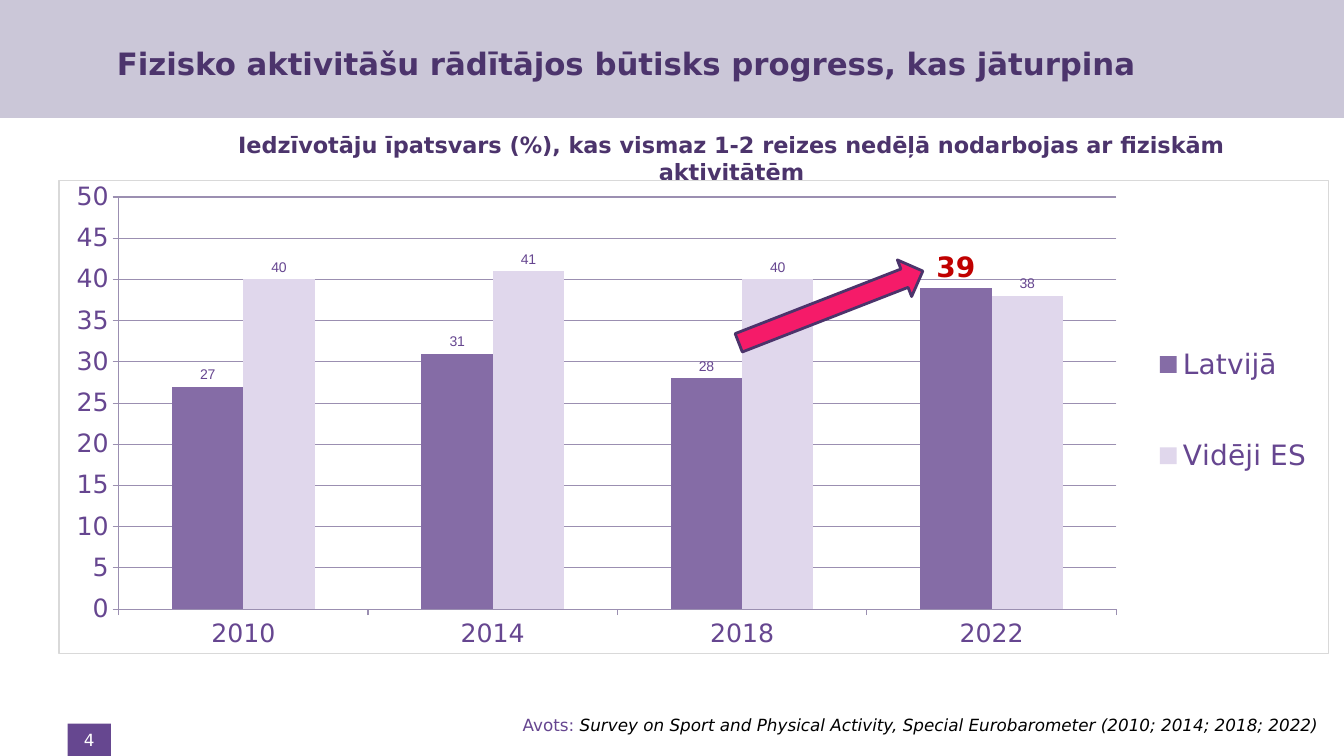
from pptx import Presentation
from pptx import util as u
from pptx.chart import data as chart_data
from pptx.dml.color import RGBColor
from pptx.enum import chart as c, shapes, text
from pptx.oxml import parse_xml
from pptx.oxml.ns import nsdecls

COLORS = {
    "band": "CBC7D8", "page": "664790", "heading": "4C346C", "label": "664690",
    "grid": "9B8FB1", "frame": "D9D9D9", "latvia": "856CA6", "europe": "E0D7EC",
    "highlight": "C00000", "arrow": "F51B69", "outline": "4B346B",
    "white": "FFFFFF", "black": "000000",
}
MAIN_FONT = "DejaVu Sans"
YEARS = ["2010", "2014", "2018", "2022"]
SERIES = [("Latvijā", (27, 31, 28, 39), "latvia"),
          ("Vidēji ES", (40, 41, 40, 38), "europe")]


def rgb(name):
    return RGBColor.from_string(COLORS[name])


def style_font(font, size, color, name=MAIN_FONT, **extra):
    values = {"size": u.Pt(size), "name": name, **extra}
    for key, value in values.items():
        setattr(font, key, value)
    font.color.rgb = rgb(color)


def style_line(line, color, width):
    line.color.rgb = rgb(color)
    line.width = u.Pt(width)


def add_block(slide, box, fill, preset=shapes.MSO_SHAPE.RECTANGLE):
    shape = slide.shapes.add_shape(preset, *map(u.Inches, box))
    shape.shadow.inherit = False
    shape.fill.solid()
    shape.fill.fore_color.rgb = rgb(fill)
    shape.line.fill.background()
    return shape


def add_text(slide, box, runs, align=text.PP_ALIGN.LEFT,
             anchor=text.MSO_ANCHOR.TOP, inset=0.1, spacing=None):
    """Add one paragraph; runs holds (wording, font format) pairs."""
    frame = slide.shapes.add_textbox(*map(u.Inches, box)).text_frame
    values = {"word_wrap": True, "vertical_anchor": anchor,
              "margin_left": u.Inches(inset)}
    for key, value in values.items():
        setattr(frame, key, value)
    paragraph = frame.paragraphs[0]
    paragraph.alignment = align
    paragraph.line_spacing = spacing
    for wording, font_format in runs:
        run = paragraph.add_run()
        run.text = wording
        style_font(run.font, **font_format)
    return frame


def add_header(slide, left, top, width, height):
    add_block(slide, (left, top, width, height), "band")
    add_text(slide, (left + 1.16, top, width - 1.49, height + 0.08),
             [("Fizisko aktivitāšu rādītājos būtisks progress, kas jāturpina",
               {"size": 22, "color": "heading", "bold": True})],
             anchor=text.MSO_ANCHOR.MIDDLE, inset=0)
    add_text(slide, (left + 2.21, top + 1.25, 10.09, 0.63),
             [("Iedzīvotāju īpatsvars (%), kas vismaz 1-2 reizes nedēļā "
               "nodarbojas ar fiziskām aktivitātēm",
               {"size": 16, "color": "heading", "bold": True})],
             align=text.PP_ALIGN.CENTER)


def layout_xml(x, y, w, h, inner=False):
    """Return a manual chart layout given in fractions of the chart."""
    target = '<c:layoutTarget val="inner"/>' if inner else ""
    sizes = "".join(f'<c:{key} val="{value}"/>'
                    for key, value in zip("xywh", (x, y, w, h)))
    return parse_xml(
        f'<c:layout {nsdecls("c")}><c:manualLayout>{target}'
        f'<c:xMode val="edge"/><c:yMode val="edge"/>{sizes}'
        '</c:manualLayout></c:layout>')


def place_part(part, index, layout):
    for old in part.xpath("c:layout"):
        part.remove(old)
    part.insert(index, layout)


def style_axes(chart):
    for axis in (chart.category_axis, chart.value_axis):
        axis.major_tick_mark = c.XL_TICK_MARK.OUTSIDE
        style_font(axis.tick_labels.font, 18, "label")
        style_line(axis.format.line, "grid", 0.75)
    values = chart.value_axis
    limits = {"minimum_scale": 0, "maximum_scale": 50, "major_unit": 5,
              "has_major_gridlines": True}
    for key, value in limits.items():
        setattr(values, key, value)
    values.tick_labels.number_format = "0"
    values.tick_labels.number_format_is_linked = False
    style_line(values.major_gridlines.format.line, "grid", 0.75)


def style_series(plot):
    plot.gap_width = 150
    plot.overlap = 0
    plot.vary_by_categories = False
    for series, (_, _, color) in zip(plot.series, SERIES):
        series.format.fill.solid()
        series.format.fill.fore_color.rgb = rgb(color)
        labels = series.data_labels
        labels.show_value = True
        labels.position = c.XL_LABEL_POSITION.OUTSIDE_END
        style_font(labels.font, 10, "label", name="Arial")
    newest = plot.series[0].points[len(YEARS) - 1].data_label
    style_font(newest.font, 20, "highlight", bold=True)
    newest.position = c.XL_LABEL_POSITION.OUTSIDE_END


def add_activity_chart(slide, left, top, width, height):
    table = chart_data.CategoryChartData()
    table.categories = YEARS
    for name, values, _ in SERIES:
        table.add_series(name, values)
    chart = slide.shapes.add_chart(
        c.XL_CHART_TYPE.COLUMN_CLUSTERED,
        *map(u.Inches, (left, top, width, height)), table).chart
    chart.has_title = False
    style_font(chart.font, 10, "black", name="Arial")
    style_axes(chart)
    style_series(chart.plots[0])

    chart.has_legend = True
    chart.legend.position = c.XL_LEGEND_POSITION.RIGHT
    chart.legend.include_in_layout = False
    style_font(chart.legend.font, 20, "label")
    chart_space = chart._chartSpace
    place_part(chart_space.xpath("c:chart/c:plotArea")[0], 0,
               layout_xml(0.047, 0.034, 0.786, 0.872, inner=True))
    place_part(chart_space.xpath("c:chart/c:legend")[0], 1,
               layout_xml(0.85, 0.23, 0.15, 0.51))
    chart_space.xpath("c:chart")[0].addnext(parse_xml(
        f'<c:spPr {nsdecls("c", "a")}><a:noFill/><a:ln w="{u.Pt(0.75)}">'
        f'<a:solidFill><a:srgbClr val="{COLORS["frame"]}"/></a:solidFill>'
        '</a:ln></c:spPr>'))

    arrow = add_block(slide, (left + 6.68, top + 1.06, 1.96, 0.39), "arrow",
                      shapes.MSO_SHAPE.RIGHT_ARROW)
    arrow.rotation = 338.7
    style_line(arrow.line, "outline", 2)


def add_footer(slide, left, top, width, height):
    number_box = (left, top, 0.43, height)
    add_block(slide, number_box, "page")
    frame = add_text(slide, number_box, [("4", {"size": 12, "color": "white"})],
                     align=text.PP_ALIGN.CENTER,
                     anchor=text.MSO_ANCHOR.MIDDLE, inset=0.04)
    for side in ("right", "top", "bottom"):
        setattr(frame, f"margin_{side}", u.Inches(0.04))
    source_width = 9.66
    add_text(slide, (left + width - source_width, top - 0.1, source_width, 0.26),
             [("Avots: ", {"size": 12, "color": "label"}),
              ("Survey on Sport and Physical Activity, Special Eurobarometer "
               "(2010; 2014; 2018; 2022)",
               {"size": 12, "color": "black", "italic": True})],
             align=text.PP_ALIGN.RIGHT, spacing=0.8)


def main():
    presentation = Presentation()
    presentation.slide_width = u.Inches(13.33)
    presentation.slide_height = u.Inches(7.5)
    slide = presentation.slides.add_slide(presentation.slide_layouts[6])
    add_header(slide, 0, 0, 13.33, 1.17)
    add_activity_chart(slide, 0.58, 1.79, 12.6, 4.7)
    add_footer(slide, 0.67, 7.18, 12.51, 0.32)
    presentation.save("out.pptx")


if __name__ == "__main__":
    main()
